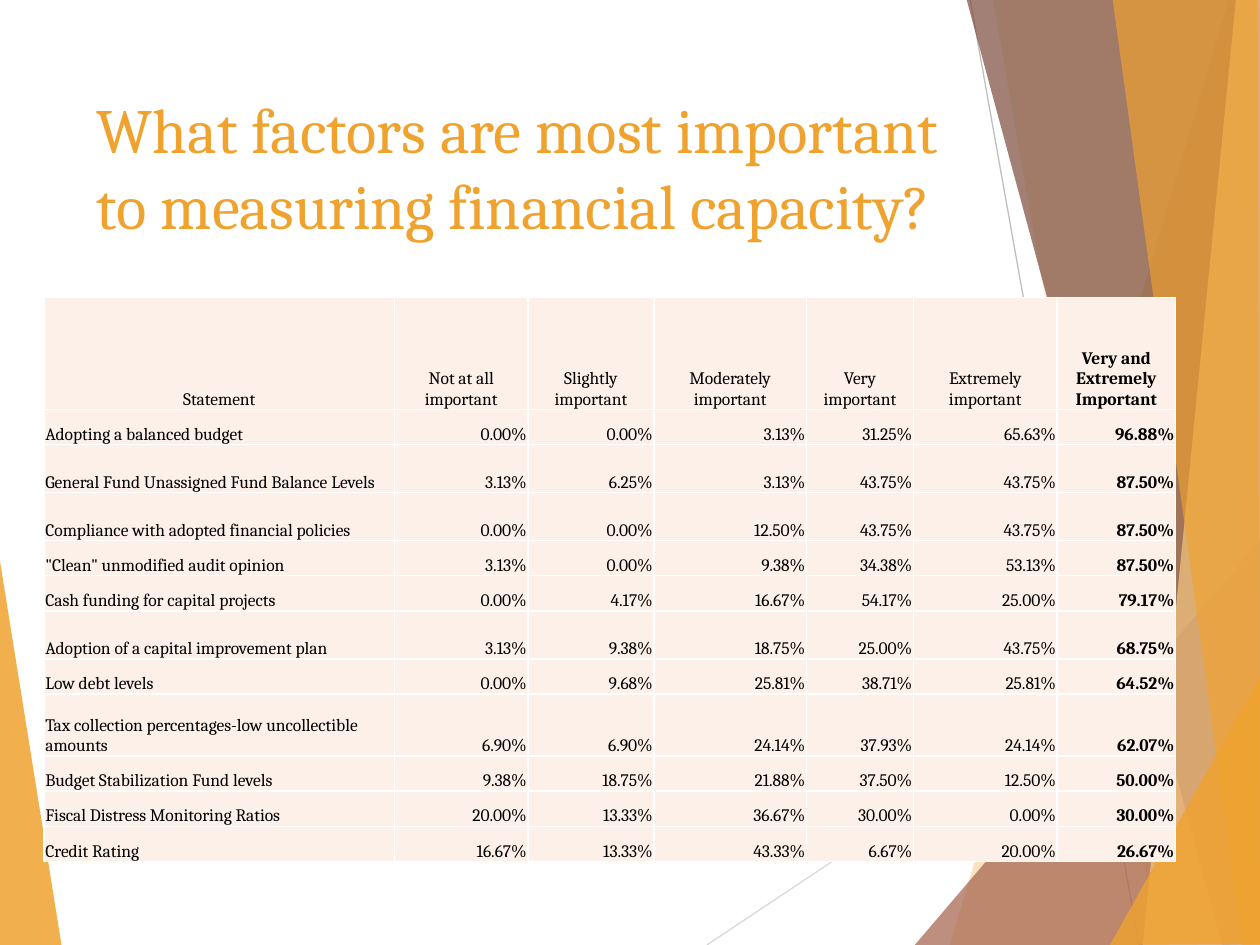
from lxml import etree
from pptx import Presentation
from pptx.dml.color import RGBColor
from pptx.enum.shapes import MSO_CONNECTOR
from pptx.enum.text import MSO_ANCHOR, PP_ALIGN
from pptx.oxml.ns import qn
from pptx.util import Inches, Pt

LINE = MSO_CONNECTOR.STRAIGHT
TOP, BASE = MSO_ANCHOR.TOP, MSO_ANCHOR.BOTTOM
LEFT, MID, RIGHT = PP_ALIGN.LEFT, PP_ALIGN.CENTER, PP_ALIGN.RIGHT
FONT = "Cambria"
HEX = {
    "gold": "F0A22E", "clay": "A5644E", "brown": "7C4B3B", "sand": "F6C782",
    "mist": "D9D9D9", "gray": "BFBFBF", "cream": "FCF0E8",
    "white": "FFFFFF", "black": "000000",
}


def put(item, form):
    for key, val in form.items():
        setattr(item, key, val)


def sub(parent, tag, **attrs):
    return etree.SubElement(parent, qn(tag), attrs)


deck = Presentation()
put(deck, {"slide_width": Inches(10), "slide_height": Inches(7.5)})
slide = deck.slides.add_slide(deck.slide_layouts[6])
shapes = slide.shapes

# Thin lines behind the facets
for x1, y1, x2, y2, tint in [(5.61, 7.5, 10.01, 4.57, "mist"),
                             (7.7, 0, 9.04, 7.5, "gray")]:
    rule = shapes.add_connector(LINE, Inches(x1), Inches(y1), Inches(x2), Inches(y2))
    rule.line.width = Pt(0.75)
    rule.line.color.rgb = RGBColor.from_string(HEX[tint])
    sub(rule._element.spPr, "a:effectLst")

# Translucent facets: colour, opacity in percent, corners
facets = [
    ("gold", 85, [(-0.01, 4.39), (0.49, 7.51), (-0.01, 7.5)]),
    ("gold", 30, [(9.75, 0), (7.54, 7.5), (10.02, 7.51), (10.01, 0.01)]),
    ("gold", 20, [(7.88, -0.01), (9.19, 7.5), (10.01, 7.5), (10.01, -0.01)]),
    ("clay", 72, [(7.26, 7.5), (10, 4.29), (10.01, 7.5)]),
    ("brown", 70, [(7.67, -0.01), (9.7, 7.5), (10.01, 7.49), (10.01, -0.01)]),
    ("sand", 70, [(9.81, -0.01), (9.07, 7.5), (10.01, 7.5), (10, -0.01)]),
    ("gold", 65, [(8.83, -0.01), (9.86, 7.5), (10, 7.5), (9.98, -0.01)]),
    ("gold", 80, [(8.81, 7.5), (10.01, 5.35), (10.01, 7.49)]),
]
for tint, alpha, spots in facets:
    spots = [(Inches(x), Inches(y)) for x, y in spots]
    pen = shapes.build_freeform(*spots[0])
    pen.add_line_segments(spots[1:], close=True)
    facet = pen.convert_to_shape()
    facet.shadow.inherit = False
    facet.line.fill.background()
    facet.fill.solid()
    facet.fill.fore_color.rgb = RGBColor.from_string(HEX[tint])
    shade = facet._element.spPr.find(qn("a:solidFill"))[0]
    sub(shade, "a:alpha", val=str(alpha * 1000))

# Title, shrunk to fit its box
box = shapes.add_textbox(Inches(0.67), Inches(0.67), Inches(6.94), Inches(1.44))
frame = box.text_frame
put(frame, {"word_wrap": True, "vertical_anchor": TOP})
body = frame._txBody.bodyPr
for child in list(body):
    body.remove(child)
sub(body, "a:normAutofit", fontScale="90000")
run = frame.paragraphs[0].add_run()
run.text = "What factors are most important to measuring financial capacity?"
put(run.font, {"name": FONT, "size": Pt(36)})
run.font.color.rgb = RGBColor.from_string(HEX["gold"])

# Survey table: row height, then the cells
cols = [2.78, 1.06, 1, 1.21, 0.85, 1.14, 0.94]
rows = [
    (0.89, "Statement", "Not at all important", "Slightly important",
     "Moderately important", "Very important", "Extremely important",
     "Very and Extremely Important"),
    (0.28, "Adopting a balanced budget",
     "0.00%", "0.00%", "3.13%", "31.25%", "65.63%", "96.88%"),
    (0.38, "General Fund Unassigned Fund Balance Levels",
     "3.13%", "6.25%", "3.13%", "43.75%", "43.75%", "87.50%"),
    (0.38, "Compliance with adopted financial policies",
     "0.00%", "0.00%", "12.50%", "43.75%", "43.75%", "87.50%"),
    (0.28, '"Clean" unmodified audit opinion',
     "3.13%", "0.00%", "9.38%", "34.38%", "53.13%", "87.50%"),
    (0.28, "Cash funding for capital projects",
     "0.00%", "4.17%", "16.67%", "54.17%", "25.00%", "79.17%"),
    (0.38, "Adoption of a capital improvement plan",
     "3.13%", "9.38%", "18.75%", "25.00%", "43.75%", "68.75%"),
    (0.28, "Low debt levels",
     "0.00%", "9.68%", "25.81%", "38.71%", "25.81%", "64.52%"),
    (0.49, "Tax collection percentages-low uncollectible amounts",
     "6.90%", "6.90%", "24.14%", "37.93%", "24.14%", "62.07%"),
    (0.28, "Budget Stabilization Fund levels",
     "9.38%", "18.75%", "21.88%", "37.50%", "12.50%", "50.00%"),
    (0.28, "Fiscal Distress Monitoring Ratios",
     "20.00%", "13.33%", "36.67%", "30.00%", "0.00%", "30.00%"),
    (0.28, "Credit Rating",
     "16.67%", "13.33%", "43.33%", "6.67%", "20.00%", "26.67%"),
]
high = sum(row[0] for row in rows)
grid = shapes.add_table(len(rows), len(cols), Inches(0.35), Inches(2.36),
                        Inches(sum(cols)), Inches(high)).table
put(grid, {"first_row": False, "horz_banding": False})
for col, wide in zip(grid.columns, cols):
    col.width = Inches(wide)

inset = {"margin_left": Inches(0.01), "margin_right": Inches(0.01),
         "margin_top": Inches(0.01), "margin_bottom": 0,
         "vertical_anchor": BASE}
for r, (tall, *texts) in enumerate(rows):
    grid.rows[r].height = Inches(tall)
    for c, text in enumerate(texts):
        cell = grid.cell(r, c)
        put(cell, inset)
        # White borders come before the fill
        props = cell._tc.get_or_add_tcPr()
        for side in "LRTB":
            edge = sub(props, "a:ln" + side, w=str(Pt(1)))
            sub(sub(edge, "a:solidFill"), "a:srgbClr", val=HEX["white"])
        cell.fill.solid()
        cell.fill.fore_color.rgb = RGBColor.from_string(HEX["cream"])
        para = cell.text_frame.paragraphs[0]
        para.alignment = MID if r == 0 else RIGHT if c else LEFT
        run = para.add_run()
        run.text = text
        put(run.font, {"name": FONT, "size": Pt(10), "bold": c == len(cols) - 1})
        run.font.color.rgb = RGBColor.from_string(HEX["black"])

deck.save("out.pptx")
